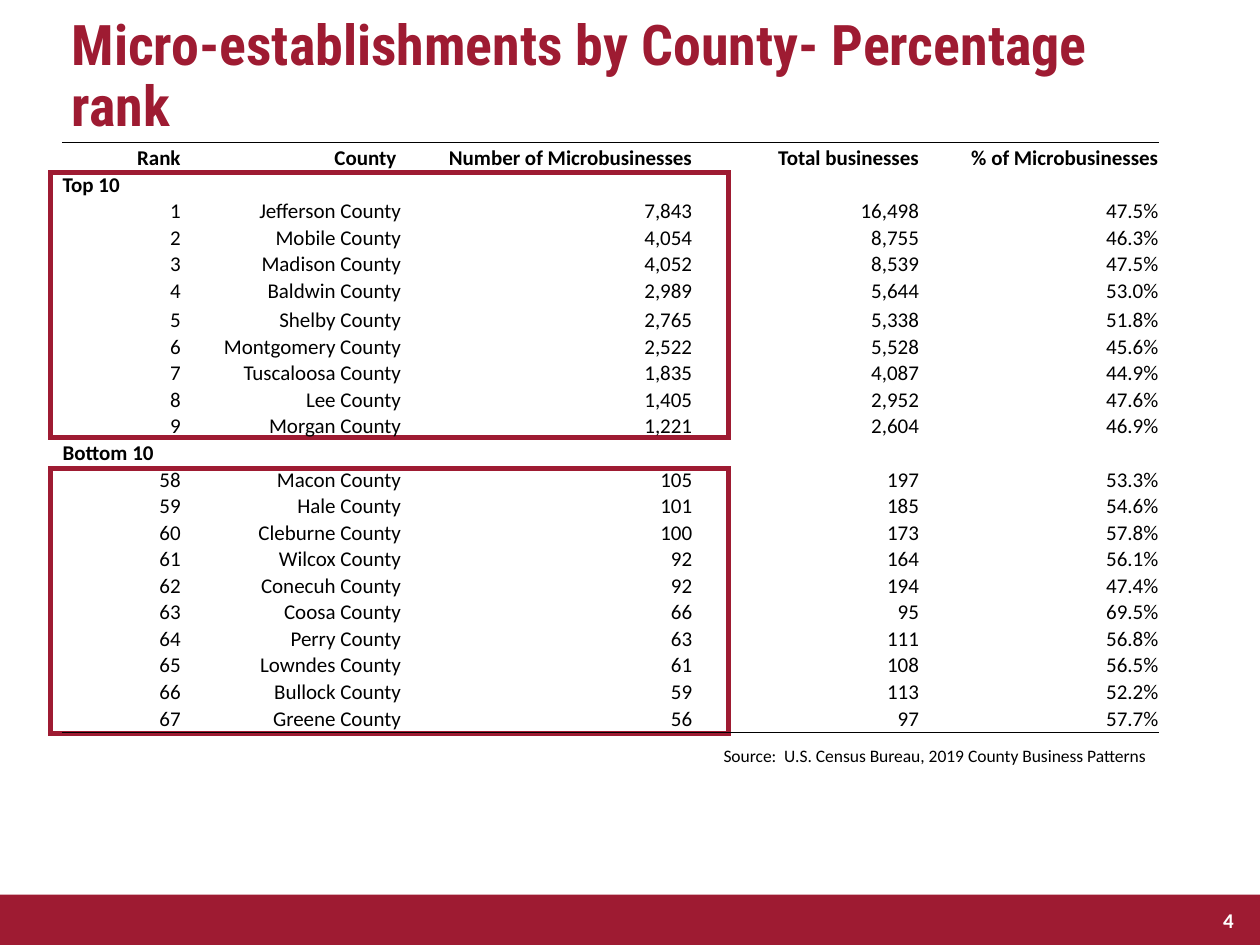
import pptx
import pptx.dml.color
import pptx.enum.shapes
import pptx.enum.text
import pptx.oxml
import pptx.oxml.ns
import pptx.util
from lxml import etree

Inches, Pt = pptx.util.Inches, pptx.util.Pt
ALIGN, ANCHOR = pptx.enum.text.PP_ALIGN, pptx.enum.text.MSO_ANCHOR
qn = pptx.oxml.ns.qn

W, H = 10, 7.5
CRIMSON, BLACK, WHITE = "9E1B32", "000000", "FFFFFF"
NO_GRID_STYLE = "{2D5ABB26-0587-4C30-8999-92F81FD0307C}"

TITLE = "Micro-establishments by County- Percentage rank"
SOURCE = "Source:  U.S. Census Bureau, 2019 County Business Patterns"
HEADER = ("Rank", "County ", "Number of Microbusinesses",
          "Total businesses", "% of Microbusinesses")
TOP = [
    ("1", "Jefferson County", "7,843", "16,498", "47.5%"),
    ("2", "Mobile County", "4,054", "8,755", "46.3%"),
    ("3", "Madison County", "4,052", "8,539", "47.5%"),
    ("4", "Baldwin County", "2,989", "5,644", "53.0%"),
    ("5", "Shelby County", "2,765", "5,338", "51.8%"),
    ("6", "Montgomery County", "2,522", "5,528", "45.6%"),
    ("7", "Tuscaloosa County", "1,835", "4,087", "44.9%"),
    ("8", "Lee County", "1,405", "2,952", "47.6%"),
    ("9", "Morgan County", "1,221", "2,604", "46.9%"),
]
BOTTOM = [
    ("58", "Macon County", "105", "197", "53.3%"),
    ("59", "Hale County", "101", "185", "54.6%"),
    ("60", "Cleburne County", "100", "173", "57.8%"),
    ("61", "Wilcox County", "92", "164", "56.1%"),
    ("62", "Conecuh County", "92", "194", "47.4%"),
    ("63", "Coosa County", "66", "95", "69.5%"),
    ("64", "Perry County", "63", "111", "56.8%"),
    ("65", "Lowndes County", "61", "108", "56.5%"),
    ("66", "Bullock County", "59", "113", "52.2%"),
    ("67", "Greene County", "56", "97", "57.7%"),
]
ROWS = [HEADER, ("Top 10",), *TOP, ("Bottom 10",), *BOTTOM]

TABLE_LEFT, TABLE_TOP = 0.49, 1.13
COL_WIDTHS = (0.95, 1.75, 2.31, 1.8, 1.9)
ROW_PT = 15.17
ODD_ROWS_PT = {0: 16.6, 6: 16.8, len(ROWS) - 1: 15.6}
FRAME_TOPS = (1.37, 3.72)


def rgb(value):
    return pptx.dml.color.RGBColor.from_string(value)


def write(tf, text, size, color, bold=False, align=ALIGN.RIGHT, name="Calibri"):
    p = tf.paragraphs[0]
    p.alignment = align
    r = p.add_run()
    r.text = text
    for key, value in dict(size=Pt(size), bold=bold, name=name).items():
        setattr(r.font, key, value)
    r.font.color.rgb = rgb(color)
    return p


def add_text(s, box, text, size, color, anchor=ANCHOR.TOP, **style):
    tf = s.shapes.add_textbox(*map(Inches, box)).text_frame
    tf.word_wrap = True
    tf.vertical_anchor = anchor
    return write(tf, text, size, color, **style)


def add_rect(s, box, fill):
    sp = s.shapes.add_shape(pptx.enum.shapes.MSO_SHAPE.RECTANGLE, *map(Inches, box))
    sp.shadow.inherit = False
    sp.fill.solid()
    sp.fill.fore_color.rgb = rgb(fill)
    sp.line.fill.background()
    return sp


def add_frame(s, box):
    """Square-cornered crimson outline around a faint white fill."""
    sp = add_rect(s, box, WHITE)
    color = sp._element.spPr.find(qn("a:solidFill")).find(qn("a:srgbClr"))
    etree.SubElement(color, qn("a:alpha"), val="18000")
    sp.line.fill.solid()
    sp.line.fill.fore_color.rgb = rgb(CRIMSON)
    sp.line.width = Pt(2.75)
    ln = sp._element.spPr.find(qn("a:ln"))
    etree.SubElement(ln, qn("a:miter"), lim="800000")


def add_rule(cell, side):
    """Black 1 pt border; side is T or B. Call before the cell's fill is set."""
    ln = etree.SubElement(cell._tc.get_or_add_tcPr(), qn(f"a:ln{side}"), w=str(Pt(1)))
    fill = etree.SubElement(ln, qn("a:solidFill"))
    etree.SubElement(fill, qn("a:srgbClr"), val=BLACK)


def fill_cell(cell, text, bold, align):
    margins = dict(margin_left=Pt(0.5), margin_right=Pt(0.5),
                   margin_top=Pt(0.5), margin_bottom=0)
    for key, value in margins.items():
        setattr(cell, key, value)
    cell.vertical_anchor = ANCHOR.BOTTOM
    cell.fill.background()
    if text:
        write(cell.text_frame, text, 12, BLACK, bold, align)
    else:  # keeps an empty cell from stretching its row
        etree.SubElement(cell.text_frame.paragraphs[0]._p, qn("a:endParaRPr"), sz="1200")


def add_county_table(s):
    heights = [ODD_ROWS_PT.get(i, ROW_PT) for i in range(len(ROWS))]
    frame = s.shapes.add_table(
        len(ROWS), len(HEADER), Inches(TABLE_LEFT), Inches(TABLE_TOP),
        Inches(sum(COL_WIDTHS)), Pt(sum(heights)))
    table = frame.table
    table.first_row = table.horz_banding = False
    table._tbl.tblPr.find(qn("a:tableStyleId")).text = NO_GRID_STYLE
    for col, width in zip(table.columns, COL_WIDTHS):
        col.width = Inches(width)
    for i, values in enumerate(ROWS):
        table.rows[i].height = Pt(heights[i])
        section = len(values) == 1
        for j in range(len(HEADER)):
            cell = table.cell(i, j)
            if i == 0:
                add_rule(cell, "T")
            elif i == len(ROWS) - 1:
                add_rule(cell, "B")
            fill_cell(cell, values[j] if j < len(values) else "",
                      bold=section or i == 0,
                      align=ALIGN.LEFT if section else ALIGN.RIGHT)


def main():
    prs = pptx.Presentation()
    prs.slide_width, prs.slide_height = Inches(W), Inches(H)
    s = prs.slides.add_slide(prs.slide_layouts[6])

    add_rect(s, (0, H - 0.4, W + 0.01, 0.4), CRIMSON)
    add_text(s, (9.47, H - 0.4, 0.42, 0.4), "4", 12, WHITE, ANCHOR.MIDDLE, bold=True)
    title = add_text(s, (0.47, 0.09, 8.39, 0.57), TITLE, 32, CRIMSON, bold=True,
                     align=ALIGN.LEFT, name="Roboto Condensed")
    title.line_spacing = 0.9
    for top in FRAME_TOPS:
        add_frame(s, (0.4, top, 5.38, 2.1))
    add_county_table(s)
    add_text(s, (4.19, 5.86, 5, 0.27), SOURCE, 10, BLACK)

    prs.save("out.pptx")


if __name__ == "__main__":
    main()
